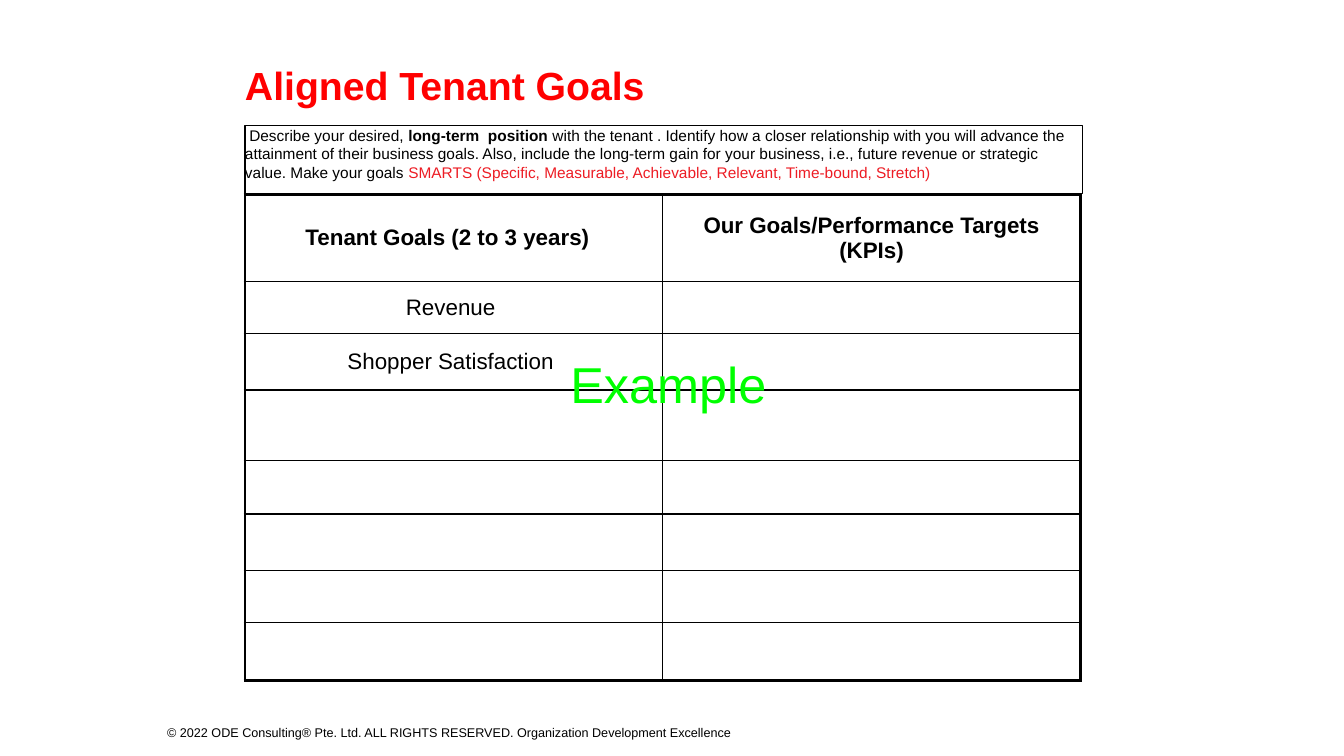
from pptx import Presentation
from pptx import util as u
from pptx.dml.color import RGBColor
from pptx.enum import text
from pptx.oxml import parse_xml

NS = "http://schemas.openxmlformats.org/drawingml/2006/main"


def style(run, size, color="000000", bold=False):
    font = run.font
    font.name = "Arial"
    font.size = u.Pt(size)
    font.bold = bold
    font.color.rgb = RGBColor.from_string(color)


def edge(cell, index, side, width):
    line = parse_xml(
        f'<a:ln{side} xmlns:a="{NS}" w="{u.Pt(width)}">'
        '<a:solidFill><a:srgbClr val="000000"/></a:solidFill>'
        f'</a:ln{side}>')
    cell._tc.get_or_add_tcPr().insert(index, line)


deck = Presentation()
deck.slide_width = u.Inches(13.33)
deck.slide_height = u.Inches(7.5)
slide = deck.slides.add_slide(deck.slide_layouts[5])
left = u.Inches(2.43)

title = slide.shapes.title
title.left, title.top = left, u.Inches(0.56)
title.width, title.height = u.Inches(9), u.Inches(0.62)
title.text_frame.text = "Aligned Tenant Goals"
title.text_frame.auto_size = text.MSO_AUTO_SIZE.NONE
title.text_frame.vertical_anchor = text.MSO_ANCHOR.MIDDLE
para = title.text_frame.paragraphs[0]
para.alignment = text.PP_ALIGN.LEFT
para.line_spacing = 0.9
style(para.runs[0], 28, "FF0000", True)

intro = slide.shapes.add_textbox(left, u.Inches(1.25), u.Inches(8.31), u.Inches(0.67))
intro.line.color.rgb = RGBColor.from_string("000000")
intro.line.width = u.Pt(0.75)
para = intro.text_frame.paragraphs[0]
para.space_after = u.Pt(4)
for words, color, bold in [
    (" Describe your desired, ", "000000", False),
    ("long-term  position", "000000", True),
    (" with the tenant . Identify how a closer relationship with you will advance "
     "the attainment of their business goals. Also, include the long-term gain for "
     "your business, i.e., future revenue or strategic value. Make your goals ",
     "000000", False),
    ("SMARTS (Specific, Measurable, Achievable, Relevant, Time-bound, Stretch)",
     "ED1C24", False),
]:
    run = para.add_run()
    run.text = words
    style(run, 11, color, bold)

for box in (title, intro):
    frame = box.text_frame
    frame.word_wrap = True
    frame.margin_left = frame.margin_right = frame.margin_top = frame.margin_bottom = 0

rows = [0.86, 0.52, 0.56, 0.7, 0.53, 0.56, 0.52, 0.57]
cols = [4.14, 4.15]
goals = {
    (0, 0): "Tenant Goals (2 to 3 years)  ",
    (0, 1): "Our Goals/Performance Targets (KPIs)",
    (1, 0): "Revenue ",
    (2, 0): "Shopper Satisfaction ",
}
table = slide.shapes.add_table(len(rows), len(cols), left, u.Inches(1.93),
                               u.Inches(sum(cols)), u.Inches(sum(rows))).table
table.first_row = table.horz_banding = False
for col, width in zip(table.columns, cols):
    col.width = u.Inches(width)
for r, height in enumerate(rows):
    table.rows[r].height = u.Inches(height)
    for c in range(len(cols)):
        cell = table.cell(r, c)
        cell.fill.background()
        outer = {"L": c == 0, "R": c == 1, "T": r == 0, "B": r == len(rows) - 1}
        for index, side in enumerate(outer):
            edge(cell, index, side, 2.25 if outer[side] else 1)
        cell.vertical_anchor = text.MSO_ANCHOR.MIDDLE
        if (r, c) in goals:
            cell.text_frame.text = goals[r, c]
            para = cell.text_frame.paragraphs[0]
            para.alignment = text.PP_ALIGN.CENTER
            style(para.runs[0], 16, bold=r == 0)

stamp = slide.shapes.add_textbox(u.Inches(5.45), u.Inches(3.45), u.Inches(2.36), u.Inches(1.59))
stamp.text_frame.text = "Example"
para = stamp.text_frame.paragraphs[0]
para.alignment = text.PP_ALIGN.CENTER
style(para.runs[0], 36, "00FF00")

foot = slide.shapes.add_textbox(u.Inches(1.56), u.Inches(7.14), u.Inches(7.37), u.Inches(0.25))
frame = foot.text_frame
frame.text = ("© 2022 ODE Consulting® Pte. Ltd. ALL RIGHTS RESERVED. "
              "Organization Development Excellence")
frame.word_wrap = True
frame.vertical_anchor = text.MSO_ANCHOR.MIDDLE
style(frame.paragraphs[0].runs[0], 9)

deck.save("out.pptx")
